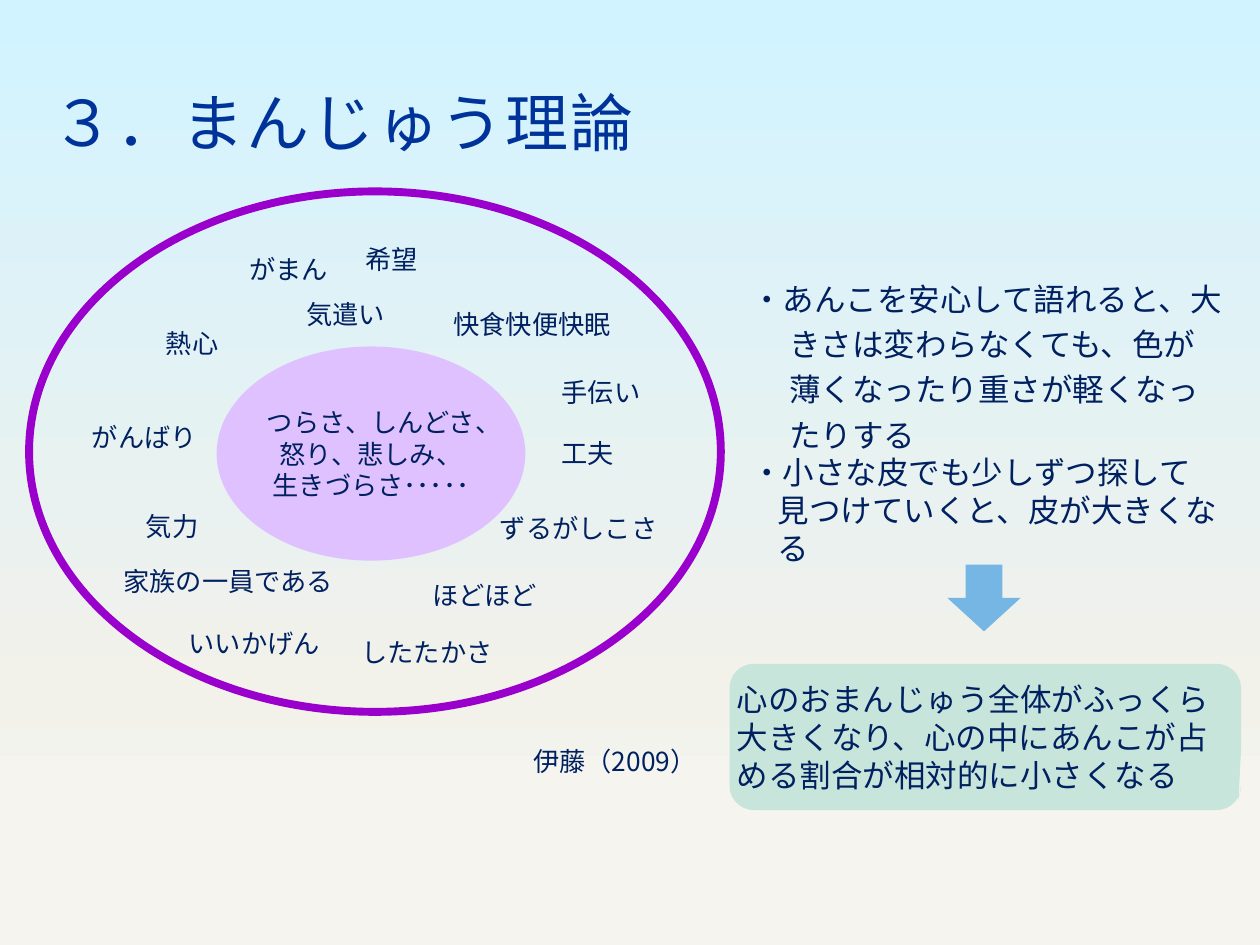
"""Build the manju theory slide: a ring of strengths around a core of distress."""
from dataclasses import dataclass

from lxml.etree import SubElement
from pptx import Presentation
from pptx.dml.color import RGBColor
from pptx.enum.shapes import MSO_SHAPE as Preset
from pptx.enum.text import MSO_ANCHOR as Anchor, PP_ALIGN as Align
from pptx.oxml.ns import qn
from pptx.util import Pt

NAVY = RGBColor(0x00, 0x20, 0x60)
TITLE_BLUE = RGBColor(0x00, 0x33, 0x9A)
PURPLE = RGBColor(0x99, 0x00, 0xCC)
LILAC = RGBColor(0xE0, 0xC1, 0xFF)
MINT = RGBColor(0xC8, 0xE5, 0xDC)
SKY = RGBColor(0x75, 0xB6, 0xE5)
BLACK = RGBColor(0x00, 0x00, 0x00)
BACKGROUND_STOPS = (
    (0, RGBColor(0xD1, 0xF3, 0xFF)),
    (74, RGBColor(0xF2, 0xF1, 0xEA)),
    (83, RGBColor(0xF5, 0xF4, 0xEF)),
    (100, RGBColor(0xF6, 0xF5, 0xF0)),
)
GOTHIC = "Noto Sans CJK JP"
SANS = "Arial"
LABEL_HEIGHT = 25.2
CALLOUT_ADJUSTMENTS = (0.495, 0.434, 0.167)
CALLOUT_INSETS = (0, 3.6, 7.2, 3.6)


@dataclass(frozen=True)
class Box:
    left: float
    top: float
    width: float
    height: float = LABEL_HEIGHT

    def lengths(self):
        return Pt(self.left), Pt(self.top), Pt(self.width), Pt(self.height)


@dataclass(frozen=True)
class Style:
    size: float = 15
    font: str = GOTHIC
    color: RGBColor = NAVY
    align: Align = Align.LEFT
    anchor: Anchor = Anchor.TOP
    insets: tuple = (7.2, 3.6, 7.2, 3.6)


@dataclass(frozen=True)
class Line:
    text: str
    hanging: float = 0
    spacing: float = 1.0


@dataclass(frozen=True)
class Strength:
    text: str
    box: Box


STRENGTHS = (
    Strength("がまん", Box(135.4, 141.1, 60.5)),
    Strength("快食快便快眠", Box(252, 172.8, 117.4)),
    Strength("ずるがしこさ", Box(278.6, 289.4, 116.6)),
    Strength("したたかさ", Box(199.4, 360, 100.8)),
    Strength("いいかげん", Box(100.8, 355, 100.8)),
    Strength("気力", Box(76.3, 288, 100.8)),
    Strength("がんばり", Box(45.4, 236.9, 100.8)),
    Strength("熱心", Box(87.8, 183.6, 100.8)),
    Strength("希望", Box(201.6, 135.4, 60.5)),
    Strength("ほどほど", Box(239.8, 327.6, 100.8)),
    Strength("工夫", Box(313.9, 246.2, 60.5)),
    Strength("手伝い", Box(313.9, 211.7, 60.5)),
    Strength("気遣い", Box(167.8, 167, 60.5)),
    Strength("家族の一員である", Box(63.4, 319.7, 138.2)),
)
CORE = (Line("つらさ、しんどさ、"), Line("怒り、悲しみ、"), Line("生きづらさ･････"))
POINTS = (
    Line("・あんこを安心して語れると、大きさは変わらなくても、色が薄くなったり重さが軽くなったりする", 21.6, 1.2),
    Line("・小さな皮でも少しずつ探して見つけていくと、皮が大きくなる", 15.1),
)
CONCLUSION = (
    Line("心のおまんじゅう全体がふっくら大きくなり、心の中にあんこが占める割合が相対的に小さくなる"),
)


def paint_background(slide) -> None:
    fill = slide.background.fill
    fill.gradient()
    fill.gradient_angle = 270
    stops = next(slide.element.iter(qn("a:gsLst")))
    for stop in list(stops):
        stops.remove(stop)
    for position, color in BACKGROUND_STOPS:
        stop = SubElement(stops, qn("a:gs"), pos=str(position * 1000))
        SubElement(stop, qn("a:srgbClr"), val=str(color))


def write_lines(shape, lines: tuple, style: Style) -> None:
    frame = shape.text_frame
    frame.word_wrap = True
    frame.vertical_anchor = style.anchor
    (frame.margin_left, frame.margin_top,
     frame.margin_right, frame.margin_bottom) = map(Pt, style.insets)
    for index, line in enumerate(lines):
        paragraph = frame.add_paragraph() if index else frame.paragraphs[0]
        paragraph.alignment = style.align
        paragraph.line_spacing = line.spacing
        if line.hanging:
            properties = paragraph._p.get_or_add_pPr()
            properties.set("marL", str(Pt(line.hanging)))
            properties.set("indent", str(-Pt(line.hanging)))
        run = paragraph.add_run()
        run.text = line.text
        run.font.size = Pt(style.size)
        run.font.name = style.font
        run.font.color.rgb = style.color
        SubElement(run.font._element, qn("a:ea"), typeface=style.font)


def add_text(slide, box: Box, lines: tuple, style: Style):
    shape = slide.shapes.add_textbox(*box.lengths())
    write_lines(shape, lines, style)
    return shape


def add_preset(slide, preset: Preset, box: Box, fill: RGBColor = None, outline: RGBColor = None):
    shape = slide.shapes.add_shape(preset, *box.lengths())
    shape.shadow.inherit = False
    if fill is None:
        shape.fill.background()
    else:
        shape.fill.solid()
        shape.fill.fore_color.rgb = fill
    if outline is None:
        shape.line.fill.background()
    else:
        shape.line.color.rgb = outline
        shape.line.width = Pt(4.5)
    return shape


def add_callout(slide, box: Box, lines: tuple, fill: RGBColor = None) -> None:
    shape = add_preset(slide, Preset.ROUNDED_RECTANGULAR_CALLOUT, box, fill)
    for index, value in enumerate(CALLOUT_ADJUSTMENTS):
        shape.adjustments[index] = value
    write_lines(shape, lines, Style(18, SANS, anchor=Anchor.MIDDLE, insets=CALLOUT_INSETS))


def add_title(slide) -> None:
    style = Style(36, GOTHIC, TITLE_BLUE, anchor=Anchor.MIDDLE, insets=(8.6, 8.6, 8.6, 7.2))
    title = add_text(slide, Box(20.9, 45.4, 586, 38.2), (Line("３．まんじゅう理論", spacing=1.2),), style)
    properties = title.text_frame.paragraphs[0].runs[0].font._element
    properties.set("spc", "110")
    effects = properties.makeelement(qn("a:effectLst"))
    properties.find(qn("a:solidFill")).addnext(effects)
    shadow = SubElement(effects, qn("a:outerShdw"), blurRad=str(Pt(3)), dist=str(Pt(3)), dir="2700000")
    color = SubElement(shadow, qn("a:srgbClr"), val=str(BLACK))
    SubElement(color, qn("a:alpha"), val="43000")


def main() -> None:
    presentation = Presentation()
    presentation.slide_width, presentation.slide_height = Pt(720), Pt(540)
    slide = presentation.slides.add_slide(presentation.slide_layouts[6])
    paint_background(slide)
    add_preset(slide, Preset.OVAL, Box(16.6, 109.4, 395.3, 297.4), outline=PURPLE)
    core = add_preset(slide, Preset.OVAL, Box(123.8, 198, 176.4, 122.4), LILAC)
    centred = Style(align=Align.CENTER, anchor=Anchor.MIDDLE)
    write_lines(core, CORE, Style(align=Align.CENTER, anchor=Anchor.MIDDLE, insets=(0, 3.6, 0, 3.6)))
    for strength in STRENGTHS:
        add_text(slide, strength.box, (Line(strength.text),), Style())
    add_text(slide, Box(295.2, 421.2, 112.3, 27.4), (Line("伊藤（2009）"),), centred)
    add_callout(slide, Box(416.9, 379.4, 292.3, 83.5), CONCLUSION, MINT)
    add_callout(slide, Box(421.2, 156.2, 292.3, 167), POINTS)
    add_preset(slide, Preset.DOWN_ARROW, Box(541.4, 322.6, 41.8, 38.2), SKY)
    add_title(slide)
    presentation.save("out.pptx")


if __name__ == "__main__":
    main()
